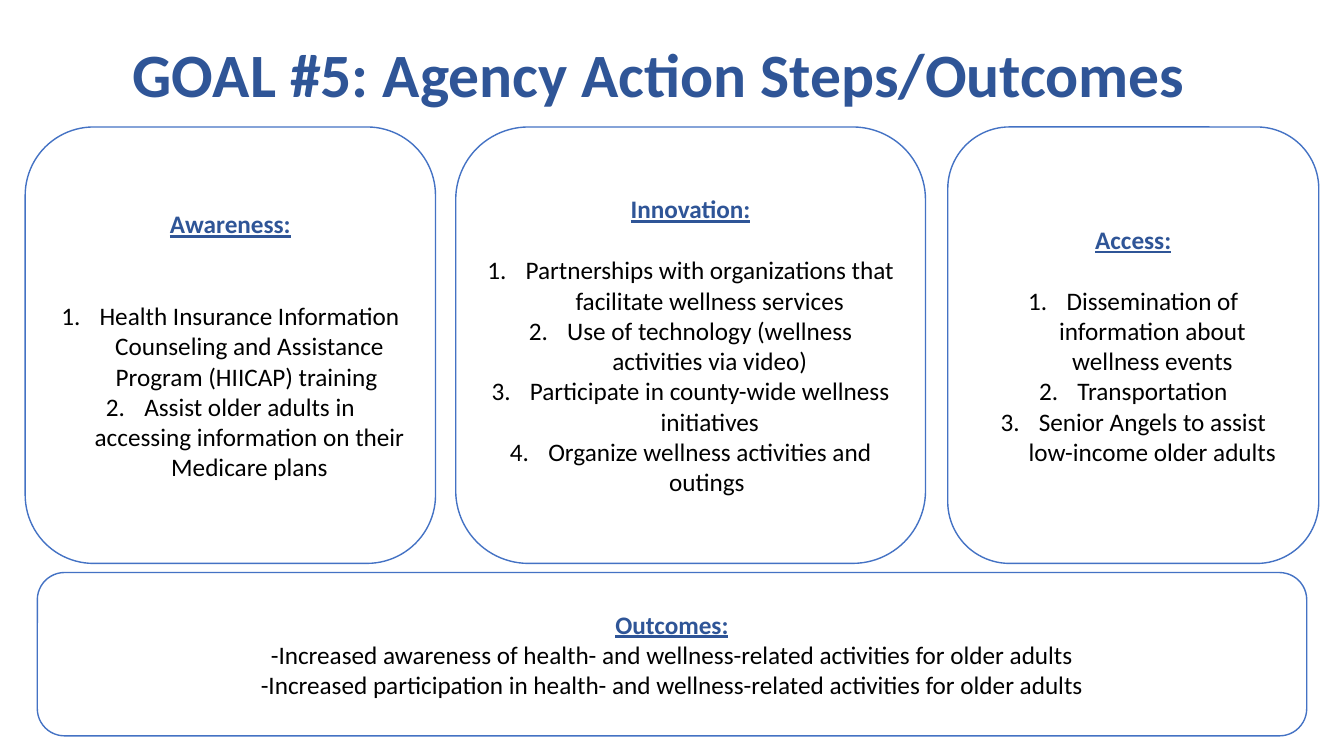
from pptx import Presentation
from pptx.dml.color import RGBColor
from pptx.enum.shapes import MSO_SHAPE
from pptx.enum.text import MSO_ANCHOR, PP_ALIGN
from pptx.oxml.ns import qn
from pptx.util import Inches, Pt
from lxml import etree

FONT = "Calibri"
NAVY, BLUE, BLACK, WHITE = "2F5597", "4472C4", "000000", "FFFFFF"
LINE_HEIGHT = 22
PANEL_TOP, PANEL_HEIGHT = 1.26, 4.33

PANELS = [
    (0.25, 4.07, "Awareness:", 2, [
        "Health Insurance Information Counseling and Assistance Program (HIICAP) training ",
        "Assist older adults in accessing information on their Medicare plans",
    ]),
    (4.52, 4.66, "Innovation:", 1, [
        "Partnerships with organizations that facilitate wellness services",
        "Use of technology (wellness activities via video)",
        "Participate in county-wide wellness initiatives",
        "Organize wellness activities and outings ",
    ]),
    (9.4, 3.68, "Access:", 1, [
        "Dissemination of information about wellness events",
        "Transportation",
        "Senior Angels to assist low-income older adults",
    ]),
]
OUTCOMES = [
    "-Increased awareness of health- and wellness-related activities for older adults",
    "-Increased participation in health- and wellness-related activities for older adults",
]


def color(value):
    """Turn a hex string into a colour."""
    return RGBColor.from_string(value)


def add_span(para, text, size, tint, heading=False, underline=False):
    """Add one centred, styled run to a paragraph."""
    para.alignment = PP_ALIGN.CENTER
    span = para.add_run()
    span.text = text
    span.font.name = FONT
    span.font.size = Pt(size)
    span.font.color.rgb = color(tint)
    span.font.bold = heading
    span.font.underline = underline


def number(para):
    """Give a paragraph automatic numbering with a hanging indent."""
    properties = para._p.get_or_add_pPr()
    properties.set("marL", str(Inches(0.38)))
    properties.set("indent", str(Inches(-0.38)))
    etree.SubElement(properties, qn("a:buFont"), typeface="+mj-lt")
    etree.SubElement(properties, qn("a:buAutoNum"), type="arabicPeriod")


def add_title(page, text):
    """Add the slide title."""
    box = page.shapes.add_textbox(Inches(0.26), 0, Inches(12.7), Inches(1.53))
    frame = box.text_frame
    frame.word_wrap = True
    frame.vertical_anchor = MSO_ANCHOR.MIDDLE
    para = frame.paragraphs[0]
    para.line_spacing = 0.9
    add_span(para, text, 44, NAVY, heading=True)


def add_panel(page, left, top, width, height, heading, lines, gap=0, numbered=False):
    """Add a rounded panel with an underlined heading above its lines."""
    panel = page.shapes.add_shape(
        MSO_SHAPE.ROUNDED_RECTANGLE,
        Inches(left), Inches(top), Inches(width), Inches(height))
    panel.shadow.inherit = False
    panel.fill.solid()
    panel.fill.fore_color.rgb = color(WHITE)
    panel.line.color.rgb = color(BLUE)
    panel.line.width = Pt(1)
    frame = panel.text_frame
    frame.word_wrap = True
    frame.vertical_anchor = MSO_ANCHOR.MIDDLE
    para = frame.paragraphs[0]
    para.space_after = Pt(gap * LINE_HEIGHT)
    add_span(para, heading, 18, NAVY, heading=True, underline=True)
    for line in lines:
        para = frame.add_paragraph()
        if numbered:
            number(para)
        add_span(para, line, 18, BLACK)


def main():
    """Build and save the slide."""
    deck = Presentation()
    deck.slide_width, deck.slide_height = Inches(13.33), Inches(7.5)
    page = deck.slides.add_slide(deck.slide_layouts[6])
    add_title(page, "GOAL #5: Agency Action Steps/Outcomes ")
    for left, width, heading, gap, steps in PANELS:
        add_panel(page, left, PANEL_TOP, width, PANEL_HEIGHT, heading, steps, gap, numbered=True)
    add_panel(page, 0.37, 5.68, 12.59, 1.62, "Outcomes:", OUTCOMES)
    deck.save("out.pptx")


if __name__ == "__main__":
    main()
